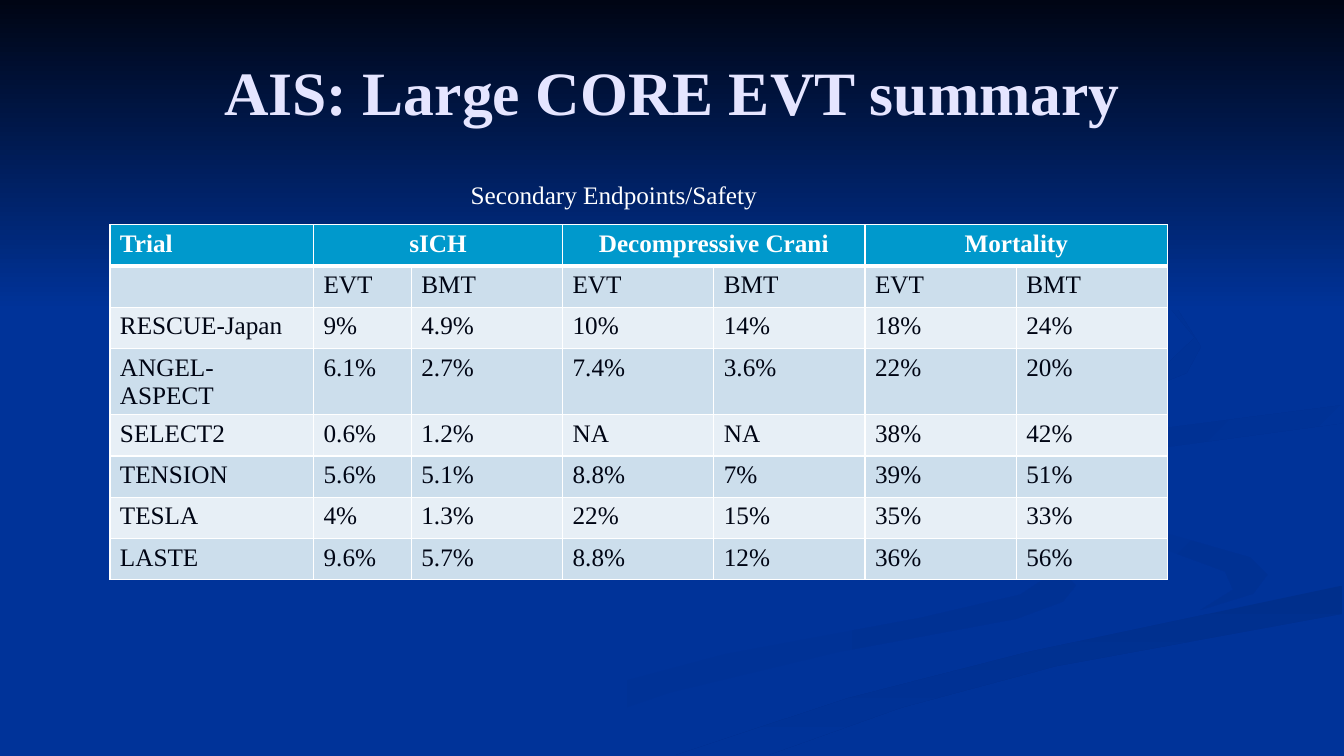
from lxml import etree
from pptx import Presentation
from pptx.dml.color import RGBColor
from pptx.enum import text
from pptx.oxml import ns
from pptx.util import Inches, Pt

FONT = "Times New Roman"
WHITE, NAVY, BLUE = "FFFFFF", "000514", "003399"


def paint(color, value):
    color.rgb = RGBColor.from_string(value)


def style(paragraph, size, color, bold=False, align=None):
    paragraph.font.name = FONT
    paragraph.font.size = Pt(size)
    paragraph.font.bold = bold
    paint(paragraph.font.color, color)
    paragraph.alignment = align


prs = Presentation()
prs.slide_width, prs.slide_height = Inches(13.33), Inches(7.5)
slide = prs.slides.add_slide(prs.slide_layouts[5])
slide.background.fill.solid()
paint(slide.background.fill.fore_color, BLUE)

# Background ribbons and top band: start colour, end colour, clockwise angle, outline
backdrop = [
    (BLUE, "003193", 0, [
        (10.42, 5.53), (10.48, 5.66), (10.12, 5.9), (9.13, 6.13), (7.19, 6.49), (5.02, 7.07),
        (4, 7.49), (4.82, 7.49), (6.65, 6.87), (8.31, 6.47), (10.08, 6.14), (10.54, 5.97),
        (10.67, 5.81)]),
    (BLUE, "003193", 45, [
        (12.57, 5.7), (12.4, 5.53), (11.6, 5.3), (10.1, 4.98), (9.65, 4.64), (10.07, 5.05),
        (11.39, 5.39), (12.15, 5.67), (12.23, 5.85), (11.91, 6.05), (12.43, 5.89)]),
    ("002F8C", BLUE, 90, [
        (6.71, 7.49), (7.62, 7.49), (8.94, 7.02), (10.47, 6.61), (13.31, 6.09), (13.31, 5.81),
        (10.19, 6.47), (8.4, 6.93)]),
    ("003091", BLUE, 45, [
        (10.42, 4.6), (11.01, 4.96), (10.73, 4.72), (11.24, 4.48), (13.31, 4.2), (13.31, 4.02),
        (11.13, 4.3)]),
    ("002F8E", BLUE, 45, [
        (9.11, 4.3), (10.99, 4.02), (11.77, 3.7), (11.91, 3.44), (11.63, 2.99), (10.17, 2.33),
        (11.49, 2.92), (11.85, 3.35), (11.48, 3.7), (8.34, 4.26), (7.69, 4.62), (8.29, 5),
        (7.91, 4.7)]),
    (NAVY, BLUE, 90, [(0, 0), (0, 3.08), (13.33, 3.08), (13.33, 0)]),
]
for start, end, angle, outline in backdrop:
    corners = [(Inches(x), Inches(y)) for x, y in outline]
    builder = slide.shapes.build_freeform(*corners[0])
    builder.add_line_segments(corners[1:])
    ribbon = builder.convert_to_shape()
    ribbon.shadow.inherit = False
    ribbon.line.fill.background()
    ribbon.fill.gradient()
    ribbon.fill.gradient_angle = -angle % 360
    for stop, color in zip(ribbon.fill.gradient_stops, (start, end)):
        paint(stop.color, color)

# Title, brought in front of the band
title = slide.shapes.title
title.left, title.top, title.width, title.height = map(Inches, (0.92, 0.18, 11.5, 1.45))
title.text_frame.text = "AIS: Large CORE EVT summary"
title.text_frame.vertical_anchor = text.MSO_ANCHOR.MIDDLE
style(title.text_frame.paragraphs[0], 44, "E5E5FF", True, text.PP_ALIGN.CENTER)
slide.shapes._spTree.append(title._element)

# Trial results
results = [
    ["Trial", "sICH", "", "Decompressive Crani", "", "Mortality", ""],
    [""] + ["EVT", "BMT"] * 3,
    ["RESCUE-Japan", "9%", "4.9%", "10%", "14%", "18%", "24%"],
    ["ANGEL-ASPECT", "6.1%", "2.7%", "7.4%", "3.6%", "22%", "20%"],
    ["SELECT2", "0.6%", "1.2%", "NA", "NA", "38%", "42%"],
    ["TENSION", "5.6%", "5.1%", "8.8%", "7%", "39%", "51%"],
    ["TESLA", "4%", "1.3%", "22%", "15%", "35%", "33%"],
    ["LASTE", "9.6%", "5.7%", "8.8%", "12%", "36%", "56%"],
]
row_height = Inches(0.41)
trials = slide.shapes.add_table(
    len(results), 7, Inches(1.09), Inches(2.23), Inches(10.47), row_height * len(results)
).table
for column, width in zip(trials.columns, [2.02, 0.97] + [1.5] * 5):
    column.width = Inches(width)
for r, values in enumerate(results):
    trials.rows[r].height = row_height
    header = r == 0
    for c, value in enumerate(values):
        cell = trials.cell(r, c)
        cell.text = value
        centred = text.PP_ALIGN.CENTER if header and c else None
        style(cell.text_frame.paragraphs[0], 18, WHITE if header else NAVY, header, centred)

        # White borders, with a heavy rule between header and body
        props = cell._tc.get_or_add_tcPr()
        for side in ("lnL", "lnR", "lnT", "lnB"):
            heavy = (r, side) in ((0, "lnB"), (1, "lnT"))
            border = etree.SubElement(props, ns.qn("a:" + side), w=str(Pt(3 if heavy else 1)))
            solid = etree.SubElement(border, ns.qn("a:solidFill"))
            etree.SubElement(solid, ns.qn("a:srgbClr"), val=WHITE)
        cell.fill.solid()
        paint(cell.fill.fore_color, "0099CC" if header else "CCDEEC" if r % 2 else "E7EFF6")
for c in (1, 3, 5):
    trials.cell(0, c).merge(trials.cell(0, c + 1))

# Table caption
caption = slide.shapes.add_textbox(Inches(4.57), Inches(1.73), Inches(3.26), Inches(0.4))
caption.text_frame.word_wrap = True
caption.text_frame.text = "Secondary Endpoints/Safety"
style(caption.text_frame.paragraphs[0], 18, WHITE)

prs.save("out.pptx")
